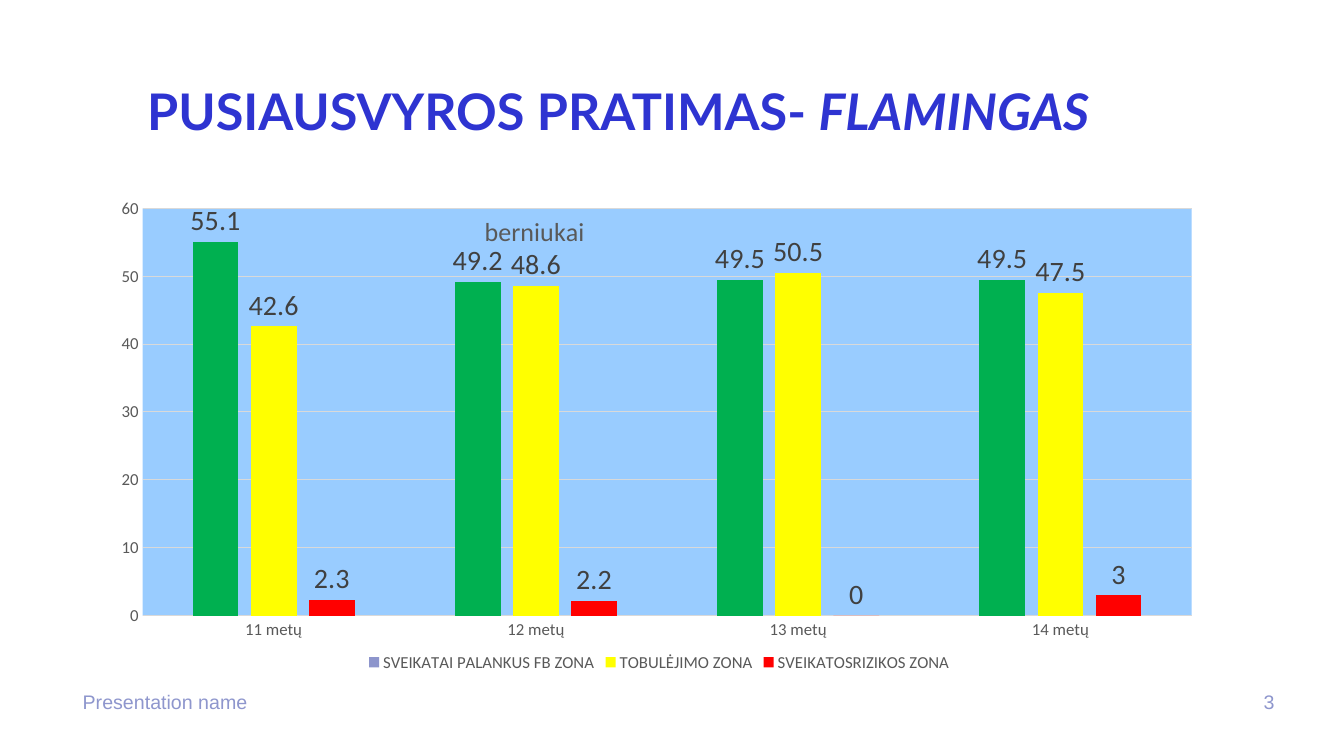
from dataclasses import dataclass
from lxml import etree
from pptx import Presentation
from pptx.chart.data import CategoryChartData
from pptx.dml.color import RGBColor
from pptx.enum.chart import XL_CHART_TYPE, XL_LABEL_POSITION, XL_LEGEND_POSITION, XL_TICK_MARK
from pptx.enum.text import MSO_ANCHOR, PP_ALIGN
from pptx.oxml import parse_xml
from pptx.oxml.ns import nsdecls, qn
from pptx.util import Pt


@dataclass(frozen=True)
class Theme:
    title: str = "2E34D1"
    footer: str = "8E96CD"
    axis_text: str = "595959"
    label_text: str = "404040"
    grid: str = "D9D9D9"
    plot: str = "99CCFF"
    healthy_key: str = "8D95CC"
    healthy: str = "00B050"
    improving: str = "FFFF00"
    risk: str = "FF0000"
    title_font: str = "Lato"
    footer_font: str = "Arial"
    chart_font: str = "Calibri"
    title_size: float = 36
    footer_size: float = 14
    axis_size: float = 12
    label_size: float = 20
    chart_title_size: float = 18.6


class SlideBuilder:
    def __init__(self, prs, theme):
        self.theme = theme
        self.s = prs.slides.add_slide(prs.slide_layouts[6])

    def style(self, font, name, size, color, bold=False):
        font.name, font.size, font.bold = name, Pt(size), bold
        font.color.rgb = RGBColor.from_string(color)

    def fill(self, fmt, color):
        fmt.fill.solid()
        fmt.fill.fore_color.rgb = RGBColor.from_string(color)

    def rule(self, line):
        line.width = Pt(0.75)
        line.color.rgb = RGBColor.from_string(self.theme.grid)

    def text(self, box, runs, name, size, color, align=PP_ALIGN.LEFT, bold=False):
        tf = self.s.shapes.add_textbox(*map(Pt, box)).text_frame
        tf.word_wrap = True
        tf.vertical_anchor = MSO_ANCHOR.TOP
        p = tf.paragraphs[0]
        p.alignment = align
        self.style(p.font, name, size, color, bold)
        for words, italic in runs:
            r = p.add_run()
            r.text = words
            if italic:
                r.font.italic = True
        return p

    def place(self, parent, index, **fractions):
        for old in parent.findall(qn("c:layout")):
            parent.remove(old)
        layout = parse_xml(f"<c:layout {nsdecls('c')}><c:manualLayout/></c:layout>")
        for tag, value in fractions.items():
            etree.SubElement(layout[0], qn(f"c:{tag}")).set("val", str(value))
        parent.insert(index, layout)

    def chart(self, box, title, categories, series):
        t = self.theme
        data = CategoryChartData()
        data.categories = categories
        for name, values, _, _ in series:
            data.add_series(name, values)
        chart = self.s.shapes.add_chart(
            XL_CHART_TYPE.COLUMN_CLUSTERED, *map(Pt, box), data).chart
        self.style(chart.font, t.chart_font, t.axis_size, t.axis_text)
        self.chart_title(chart, title)
        self.axes(chart)
        self.plot_area(chart)
        self.columns(chart.plots[0], series)
        chart.has_legend = True
        chart.legend.position = XL_LEGEND_POSITION.BOTTOM
        chart.legend.include_in_layout = False
        self.style(chart.legend.font, t.chart_font, t.axis_size, t.axis_text)

    def chart_title(self, chart, title):
        t = self.theme
        chart.has_title = True
        p = chart.chart_title.text_frame.paragraphs[0]
        p.text = title
        self.style(p.font, t.chart_font, t.chart_title_size, t.axis_text)
        node = chart.chart_title._element
        self.place(node, 1, xMode="edge", yMode="edge", x=0.34, y=0.12)
        node.find(qn("c:overlay")).set("val", "1")

    def axes(self, chart):
        t = self.theme
        for axis in (chart.category_axis, chart.value_axis):
            axis.major_tick_mark = axis.minor_tick_mark = XL_TICK_MARK.NONE
            self.style(axis.tick_labels.font, t.chart_font, t.axis_size, t.axis_text)
        self.rule(chart.category_axis.format.line)
        axis = chart.value_axis
        axis.format.line.fill.background()
        axis.minimum_scale, axis.maximum_scale, axis.major_unit = 0, 60, 10
        axis.has_major_gridlines = True
        self.rule(axis.major_gridlines.format.line)

    def plot_area(self, chart):
        area = chart._chartSpace.chart.plotArea
        self.place(area, 0, layoutTarget="inner", xMode="edge", yMode="edge",
                   x=0.039, y=0.119, w=0.936, h=0.767)
        area.append(parse_xml(
            f'<c:spPr {nsdecls("c", "a")}><a:solidFill><a:srgbClr val="{self.theme.plot}"/>'
            '</a:solidFill><a:ln><a:noFill/></a:ln></c:spPr>'))

    def columns(self, plot, series):
        t = self.theme
        plot.gap_width, plot.overlap = 219, -27
        plot.vary_by_categories = False
        for column, (_, values, color, point_color) in zip(plot.series, series):
            column.invert_if_negative = False
            self.fill(column.format, color)
            if point_color:
                for i in range(len(values)):
                    self.fill(column.points[i].format, point_color)
            labels = column.data_labels
            labels.show_value = True
            labels.position = XL_LABEL_POSITION.OUTSIDE_END
            self.style(labels.font, t.chart_font, t.label_size, t.label_text)


def main():
    prs = Presentation()
    prs.slide_width, prs.slide_height = Pt(960), Pt(540)
    t = Theme()
    b = SlideBuilder(prs, t)
    p = b.text((50.5, 58.3, 790, 99.4),
               [("PUSIAUSVYROS PRATIMAS- ", False), ("FLAMINGAS ", True)],
               t.title_font, t.title_size, t.title, PP_ALIGN.CENTER, True)
    p.line_spacing = 0.9
    footers = [((52, 489, 453.6, 27.4), "Presentation name", PP_ALIGN.LEFT),
               ((880, 489, 37.4, 28.8), "3", PP_ALIGN.RIGHT)]
    for box, words, align in footers:
        b.text(box, [(words, False)], t.footer_font, t.footer_size, t.footer, align)
    b.chart((70.6, 103.7, 800.6, 379.4), "berniukai",
            [f"{age} metų" for age in range(11, 15)],
            [("SVEIKATAI PALANKUS FB ZONA", (55.1, 49.2, 49.5, 49.5), t.healthy_key, t.healthy),
             ("TOBULĖJIMO ZONA", (42.6, 48.6, 50.5, 47.5), t.improving, None),
             ("SVEIKATOSRIZIKOS ZONA", (2.3, 2.2, 0, 3), t.risk, None)])
    prs.save("out.pptx")


if __name__ == "__main__":
    main()
